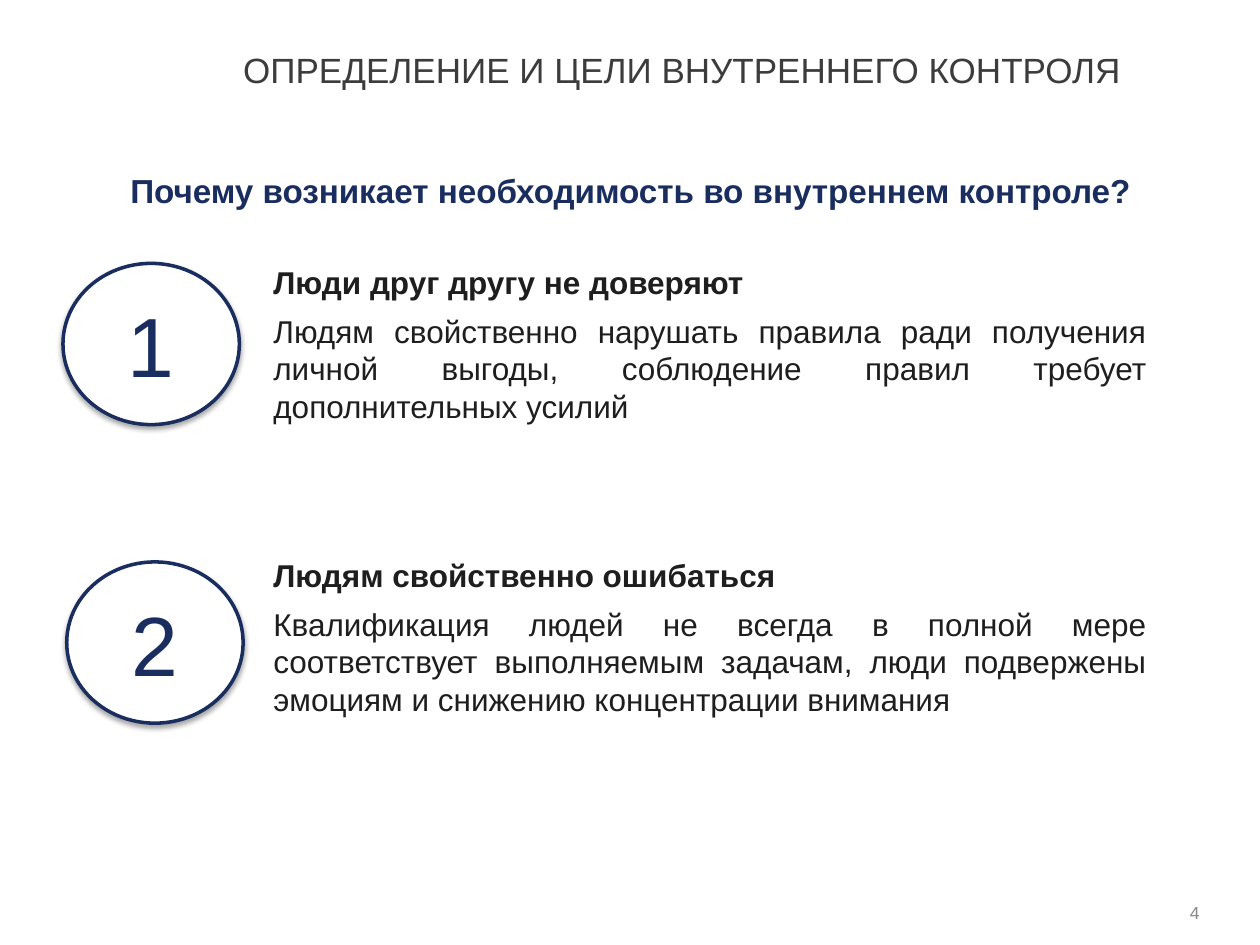
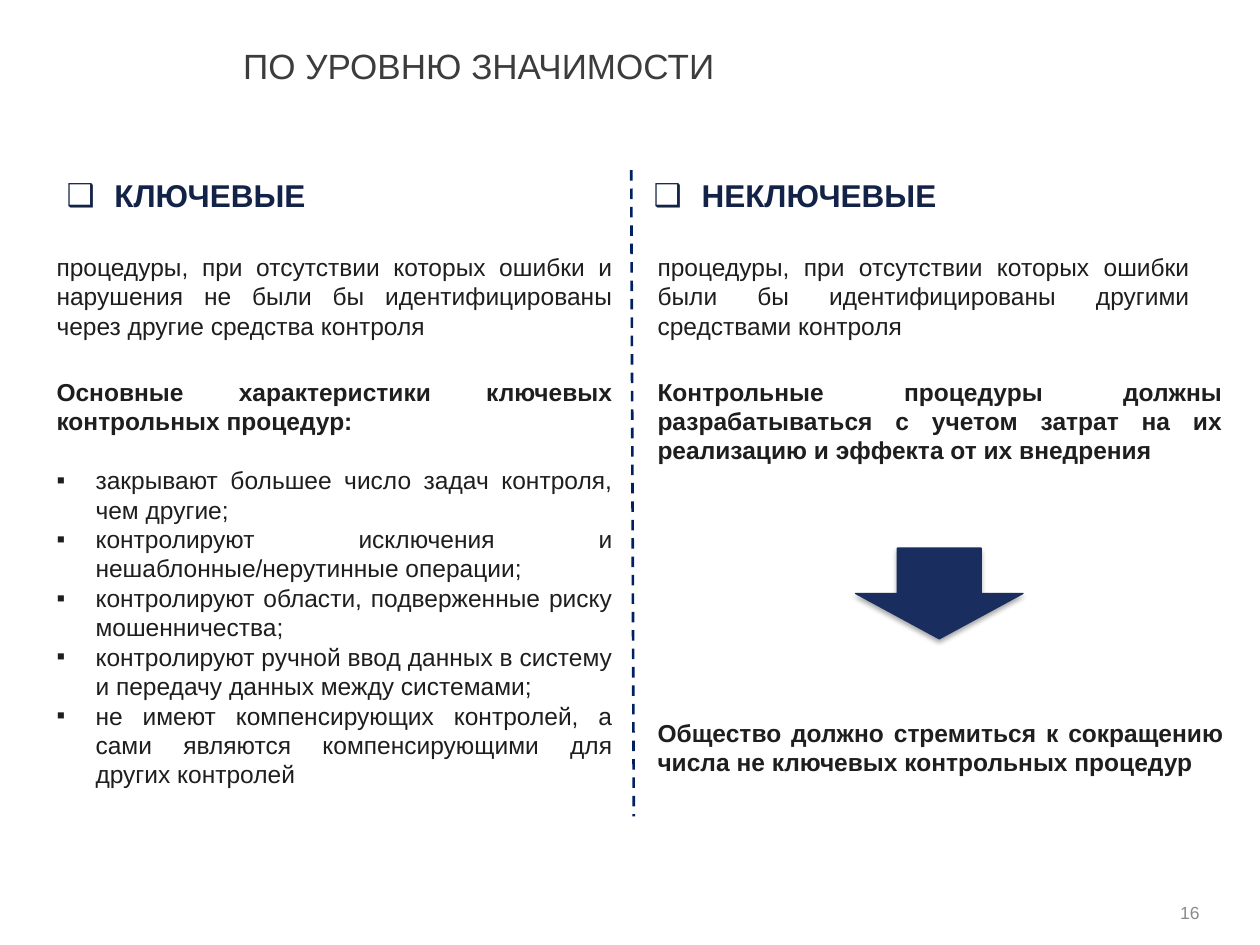
from dataclasses import dataclass
from typing import NamedTuple

import lxml.etree
import pptx
import pptx.dml.color
import pptx.enum.dml
import pptx.enum.shapes
import pptx.enum.text
import pptx.oxml.ns
import pptx.util

Align = pptx.enum.text.PP_ALIGN
Anchor = pptx.enum.text.MSO_ANCHOR
Preset = pptx.enum.shapes.MSO_SHAPE
qn = pptx.oxml.ns.qn

# The slide is a grid of square cells, 100 columns by 75 rows.
CELL = pptx.util.Inches(0.1)
COLUMNS, ROWS = 100, 75

FONT = "Arial"
NAVY, DARK_NAVY, DIVIDER_BLUE = "1A2D5F", "132247", "002060"
INK, TITLE_GREY, NUMBER_GREY = "1E1E1E", "3C3C3C", "8A8A8A"
WHITE, BLACK = "FFFFFF", "000000"


class Area(NamedTuple):
    """Left column, top row, columns wide, rows high."""
    left: float
    top: float
    width: float
    height: float


class Bullet(NamedTuple):
    sign: str
    margin: float
    hanging: float


@dataclass(frozen=True)
class Line:
    """One paragraph; sizes and spacing are in points."""
    text: str
    bold: bool = False
    before: float = 0
    bullet: Bullet | None = None


CHECKBOX = Bullet("❑", 4.6, 3.8)
SQUARE = Bullet("▪", 3.1, 3.1)

TITLE_LEFT, TITLE_WIDTH, TITLE_HEIGHT = 19.3, 76, 4.7
PAGE_NUMBER = Area(90.9, 71.5, 4.3, 1.8)


def cells(count: float) -> int:
    return round(count * CELL)


def box(area: Area) -> list[int]:
    return [cells(count) for count in area]


def rgb(code: str) -> pptx.dml.color.RGBColor:
    return pptx.dml.color.RGBColor.from_string(code)


def add_bullet(paragraph, bullet: Bullet) -> None:
    properties = paragraph._p.get_or_add_pPr()
    properties.set("marL", str(cells(bullet.margin)))
    properties.set("indent", str(-cells(bullet.hanging)))
    lxml.etree.SubElement(properties, qn("a:buFont")).set("typeface", FONT)
    lxml.etree.SubElement(properties, qn("a:buChar")).set("char", bullet.sign)


def write(shape, *lines: Line, size: float = 14, color: str = INK, align=Align.JUSTIFY,
          anchor=Anchor.TOP, inset: tuple[float, float] = (1, 0.5), spacing: float = 1) -> None:
    """Fill a shape with paragraphs; inset is the side and the top margin in cells."""
    frame = shape.text_frame
    frame.word_wrap = True
    frame.vertical_anchor = anchor
    frame.margin_left = frame.margin_right = cells(inset[0])
    frame.margin_top = frame.margin_bottom = cells(inset[1])
    for index, line in enumerate(lines):
        paragraph = frame.add_paragraph() if index else frame.paragraphs[0]
        paragraph.alignment = align
        paragraph.line_spacing = spacing
        paragraph.space_before = pptx.util.Pt(line.before)
        if line.bullet:
            add_bullet(paragraph, line.bullet)
        run = paragraph.add_run()
        run.text = line.text
        run.font.name = FONT
        run.font.size = pptx.util.Pt(size)
        run.font.bold = line.bold
        run.font.color.rgb = rgb(color)


def add_text(slide, area: Area, *lines: Line, **text_format) -> None:
    write(slide.shapes.add_textbox(*box(area)), *lines, **text_format)


def add_raised_shape(slide, preset, area: Area, fill: str, line_width: float):
    """Add a navy-outlined shape with a soft shadow below it."""
    shape = slide.shapes.add_shape(preset, *box(area))
    shape.fill.solid()
    shape.fill.fore_color.rgb = rgb(fill)
    shape.line.color.rgb = rgb(NAVY)
    shape.line.width = pptx.util.Pt(line_width)
    shape.shadow.inherit = False
    effects = shape._element.spPr.find(qn("a:effectLst"))
    shadow = lxml.etree.SubElement(
        effects, qn("a:outerShdw"), blurRad=str(pptx.util.Pt(3)),
        dist=str(pptx.util.Pt(1.8)), dir="5400000", rotWithShape="0")
    shade = lxml.etree.SubElement(shadow, qn("a:srgbClr"), val=BLACK)
    lxml.etree.SubElement(shade, qn("a:alpha"), val="35000")
    return shape


def add_divider(slide, start: tuple[float, float], end: tuple[float, float]) -> None:
    divider = slide.shapes.add_connector(
        pptx.enum.shapes.MSO_CONNECTOR.STRAIGHT, *map(cells, start + end))
    divider.line.color.rgb = rgb(DIVIDER_BLUE)
    divider.line.width = pptx.util.Pt(1.5)
    divider.line.dash_style = pptx.enum.dml.MSO_LINE.DASH
    lxml.etree.SubElement(divider._element.spPr, qn("a:effectLst"))


def add_slide(deck, title: str, title_top: float, number: int):
    slide = deck.slides.add_slide(deck.slide_layouts[5])
    heading = slide.shapes.title
    heading.left, heading.top, heading.width, heading.height = box(
        Area(TITLE_LEFT, title_top, TITLE_WIDTH, TITLE_HEIGHT))
    write(heading, Line(title), size=20, color=TITLE_GREY, align=Align.LEFT,
          inset=(0, 0), spacing=0.9)
    add_text(slide, PAGE_NUMBER, Line(str(number)), size=10, color=NUMBER_GREY,
             align=Align.RIGHT, anchor=Anchor.MIDDLE, inset=(0, 0))
    return slide


def build_reasons(deck) -> None:
    slide = add_slide(deck, "ОПРЕДЕЛЕНИЕ И ЦЕЛИ ВНУТРЕННЕГО КОНТРОЛЯ", 4.2, 4)
    add_text(slide, Area(7.5, 13.5, 85.1, 3.9),
             Line("Почему возникает необходимость во внутреннем контроле?", bold=True),
             size=19, color=NAVY, align=Align.CENTER, inset=(0, 0))
    for reason, (left, top) in enumerate([(5, 20.9), (5.3, 44.6)], start=1):
        circle = add_raised_shape(slide, Preset.OVAL, Area(left, top, 14, 12.8), WHITE, 2)
        write(circle, Line(str(reason)), size=48, color=NAVY, align=Align.CENTER,
              anchor=Anchor.MIDDLE, inset=(0.5, 0.5))
    add_text(
        slide, Area(21.7, 20.9, 69.3, 38.6),
        Line("Люди друг другу не доверяют", bold=True),
        Line("Людям свойственно нарушать правила ради получения личной выгоды, "
             "соблюдение правил требует дополнительных усилий", before=6),
        Line("Людям свойственно ошибаться", bold=True, before=75),
        Line("Квалификация людей не всегда в полной мере соответствует выполняемым "
             "задачам, люди подвержены эмоциям и снижению концентрации внимания", before=6),
        size=18, inset=(0, 0))


def build_significance(deck) -> None:
    slide = add_slide(deck, "ПО УРОВНЮ ЗНАЧИМОСТИ", 3.9, 16)
    key_left, other_left, column_width = 3.5, 51.2, 46.1
    heading_top, definition_top, detail_top = 13.5, 19.5, 29.4

    for left, name in [(key_left, "КЛЮЧЕВЫЕ"), (50.1, "НЕКЛЮЧЕВЫЕ")]:
        add_text(slide, Area(left, heading_top, column_width, 4),
                 Line(name, bold=True, bullet=CHECKBOX), size=18, color=DARK_NAVY)

    add_text(slide, Area(key_left, definition_top, column_width, 8.1),
             Line("процедуры, при отсутствии которых ошибки и нарушения не были бы "
                  "идентифицированы через другие средства контроля"))
    add_text(slide, Area(other_left, definition_top, 44.2, 8.1),
             Line("процедуры, при отсутствии которых ошибки были бы "
                  "идентифицированы другими средствами контроля"))
    add_divider(slide, (50.1, heading_top), (50.3, 64.8))

    features = [
        "закрывают большее число задач контроля, чем другие;",
        "контролируют исключения и нешаблонные/нерутинные операции;",
        "контролируют области, подверженные риску мошенничества;",
        "контролируют ручной ввод данных в систему и передачу данных между системами;",
        "не имеют компенсирующих контролей, а сами являются компенсирующими "
        "для других контролей",
    ]
    add_text(slide, Area(key_left, detail_top, column_width, 35.3),
             Line("Основные характеристики ключевых контрольных процедур:", bold=True),
             *(Line(feature, before=0 if index else 17, bullet=SQUARE)
               for index, feature in enumerate(features)))

    add_text(slide, Area(other_left, detail_top, 46.8, 8.1),
             Line("Контрольные процедуры должны разрабатываться с учетом затрат на их "
                  "реализацию и эффекта от их внедрения", bold=True))
    add_raised_shape(slide, Preset.DOWN_ARROW, Area(67.9, 43.5, 13.3, 7.2), NAVY, 0.75)
    add_text(slide, Area(other_left, 56.5, 46.9, 5.7),
             Line("Общество должно стремиться к сокращению числа не ключевых "
                  "контрольных процедур", bold=True))


def main() -> None:
    deck = pptx.Presentation()
    deck.slide_width, deck.slide_height = cells(COLUMNS), cells(ROWS)
    build_reasons(deck)
    build_significance(deck)
    deck.save("out.pptx")


if __name__ == "__main__":
    main()
